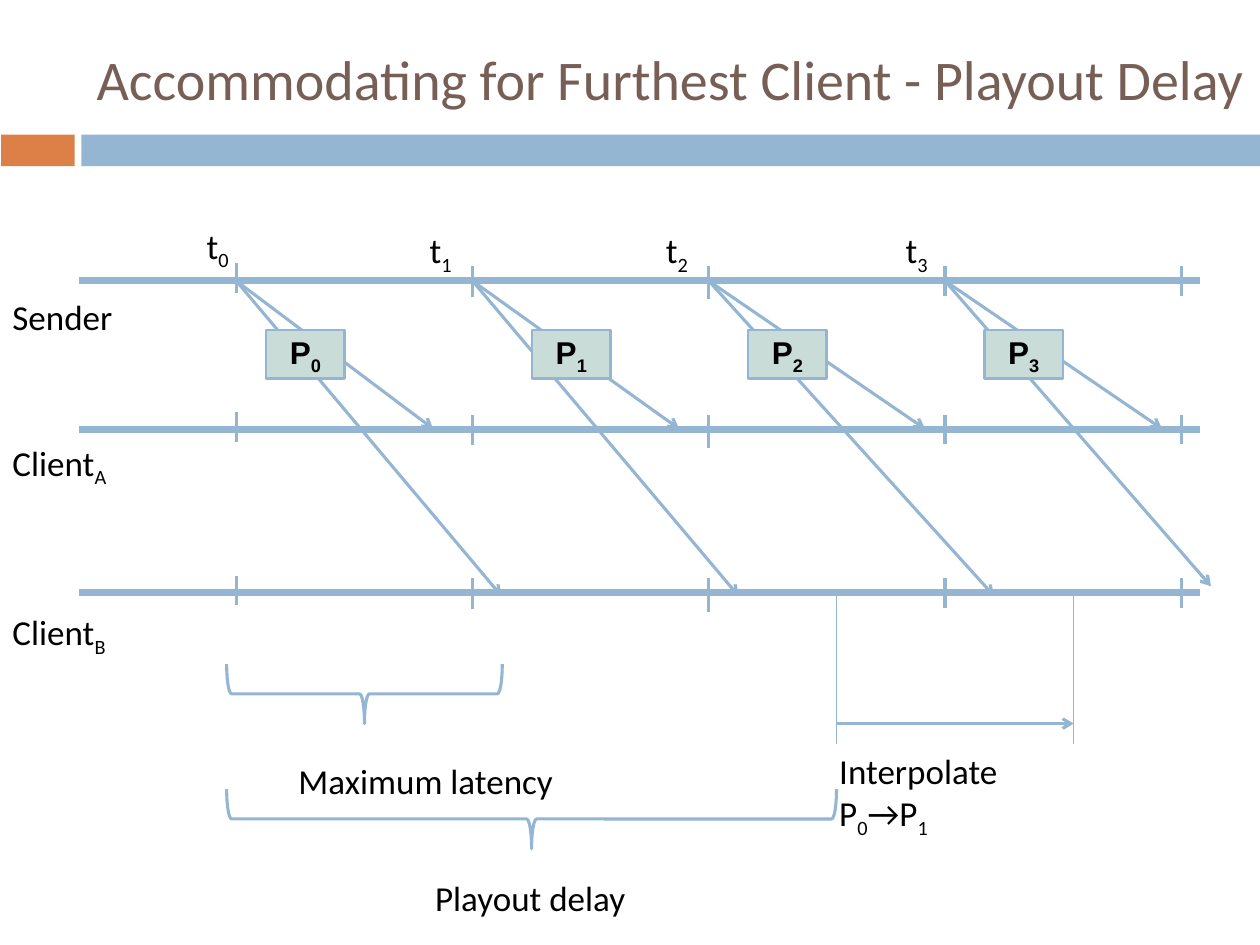
import pptx
import pptx.util
import pptx.dml.color
import pptx.enum.shapes
import pptx.enum.text
import pptx.oxml
import pptx.oxml.ns

Pt = pptx.util.Pt
Shapes = pptx.enum.shapes.MSO_SHAPE
Align = pptx.enum.text.PP_ALIGN
Anchor = pptx.enum.text.MSO_ANCHOR
AutoSize = pptx.enum.text.MSO_AUTO_SIZE

BLUE = "94B6D2"
ORANGE = "DD8047"
BROWN = "775F55"
PALE_GREEN = "CADCD8"
BLACK = "000000"


def color(value):
    return pptx.dml.color.RGBColor.from_string(value)


def write(frame, text, size=20, font="Calibri", fill=BLACK, bold=False, align=Align.LEFT):
    para = frame.paragraphs[0]
    para.alignment = align

    def add_span(content, subscript=False):
        if not content:
            return
        span = para.add_run()
        span.text = content
        span.font.size = Pt(size)
        span.font.name = font
        span.font.bold = bold
        span.font.color.rgb = color(fill)
        if subscript:
            span.font._element.set("baseline", "-25000")

    first, *others = text.split("_")
    add_span(first)
    for piece in others:
        add_span(piece[0], subscript=True)
        add_span(piece[1:])


class Diagram:
    def __init__(self, deck, stroke=BLUE, weight=1.75):
        self.page = deck.slides.add_slide(deck.slide_layouts[5])
        self.stroke = stroke
        self.weight = weight

    def title(self, text, left, top, width, height):
        box = self.page.shapes.title
        box.left, box.top, box.width, box.height = map(Pt, (left, top, width, height))
        frame = box.text_frame
        frame.auto_size = AutoSize.NONE
        frame.vertical_anchor = Anchor.MIDDLE
        write(frame, text, size=32, fill=BROWN)

    def line(self, start, end, weight=None, arrow=False):
        connector = self.page.shapes.add_connector(
            pptx.enum.shapes.MSO_CONNECTOR.STRAIGHT, *map(Pt, start + end))
        connector.line.color.rgb = color(self.stroke)
        connector.line.width = Pt(weight or self.weight)
        if arrow:
            head = pptx.oxml.parse_xml(
                f'<a:tailEnd {pptx.oxml.ns.nsdecls("a")} type="arrow"/>')
            connector.line._get_or_add_ln().append(head)
        effects = pptx.oxml.parse_xml(f'<a:effectLst {pptx.oxml.ns.nsdecls("a")}/>')
        connector._element.spPr.append(effects)

    def shape(self, kind, left, top, width, height, fill=None, weight=None):
        shape = self.page.shapes.add_shape(kind, *map(Pt, (left, top, width, height)))
        shape.shadow.inherit = False
        if fill:
            shape.fill.solid()
            shape.fill.fore_color.rgb = color(fill)
        else:
            shape.fill.background()
        if weight:
            shape.line.color.rgb = color(self.stroke)
            shape.line.width = Pt(weight)
        else:
            shape.line.fill.background()
        return shape

    def packet(self, text, left):
        box = self.shape(Shapes.RECTANGLE, left, 188.5, 45, 28, PALE_GREEN, 1.5)
        box.text_frame.vertical_anchor = Anchor.MIDDLE
        write(box.text_frame, text, size=18, font="Arial", bold=True, align=Align.CENTER)

    def brace(self, left, right, top, depth=34):
        span = right - left
        shape = self.shape(Shapes.RIGHT_BRACE, (left + right - depth) / 2,
                           top + (depth - span) / 2, depth, span, weight=self.weight)
        shape.rotation = 90

    def label(self, text, left, top, width, height=31.5, wrap=False, **style):
        box = self.page.shapes.add_textbox(*map(Pt, (left, top, width, height)))
        box.text_frame.word_wrap = wrap
        box.text_frame.auto_size = AutoSize.SHAPE_TO_FIT_TEXT
        write(box.text_frame, text, **style)

    def timeline(self, y, tick_shift):
        self.line((686, y), (45, y), weight=4)
        for index, rise in TICKS:
            top = y - rise + tick_shift
            self.line((TIMES[index], top), (TIMES[index], top + 17))


TIMES = [135 * step for step in range(1, 6)]
TICKS = [(0, 10), (1, 8), (1, 8.6), (2, 6.5), (2, 8.6), (3, 8.6), (4, 8.6)]
SENDER, CLIENT_A, CLIENT_B = 160.5, 245.5, 338.5


def main():
    deck = pptx.Presentation()
    deck.slide_width, deck.slide_height = Pt(720), Pt(540)
    diagram = Diagram(deck)

    diagram.shape(Shapes.RECTANGLE, 0.7, 77, 42, 18, ORANGE)
    diagram.shape(Shapes.RECTANGLE, 46.5, 77, 673.5, 18, BLUE)
    diagram.title("Accommodating for Furthest Client - Playout Delay", 48, 18, 672, 53)

    diagram.timeline(SENDER, 0)
    diagram.timeline(CLIENT_A, 0)
    for start, end in zip(TIMES, (247.5, 388, 528.5, 664)):
        diagram.line((start, SENDER), (end, 245), arrow=True)

    for x in (478, 613.5):
        diagram.line((x, 340.5), (x, 425), weight=1)
    diagram.line((478, 413.5), (613.5, 413.5), arrow=True)

    for index, (left, top) in enumerate([(111, 124.5), (238.5, 127), (373.5, 127), (510.5, 127)]):
        diagram.label(f"t_{index}", left, top, 28)

    diagram.label("Interpolate P_0→P_1", 472.5, 425, 124, 55.5, wrap=True)
    diagram.brace(129.5, 287, 379.5)
    diagram.label("Maximum latency", 163.5, 430.5, 161)

    diagram.timeline(CLIENT_B, 0.5)
    for start, end in zip(TIMES, ((286.5, 340.5), (422, 340.5), (568, 340.5), (692, 335))):
        diagram.line((start, SENDER), end, arrow=True)

    for index, left in enumerate((152, 304, 427.5, 562.5)):
        diagram.packet(f"P_{index}", left)

    diagram.brace(129.5, 478, 451)
    diagram.label("Playout delay", 241, 497.5, 124, align=Align.CENTER)
    for text, top in (("Sender", 165.5), ("Client_A", 248.5), ("Client_B", 345.5)):
        diagram.label(text, 0, top, 84, wrap=True)

    deck.save("out.pptx")


if __name__ == "__main__":
    main()
